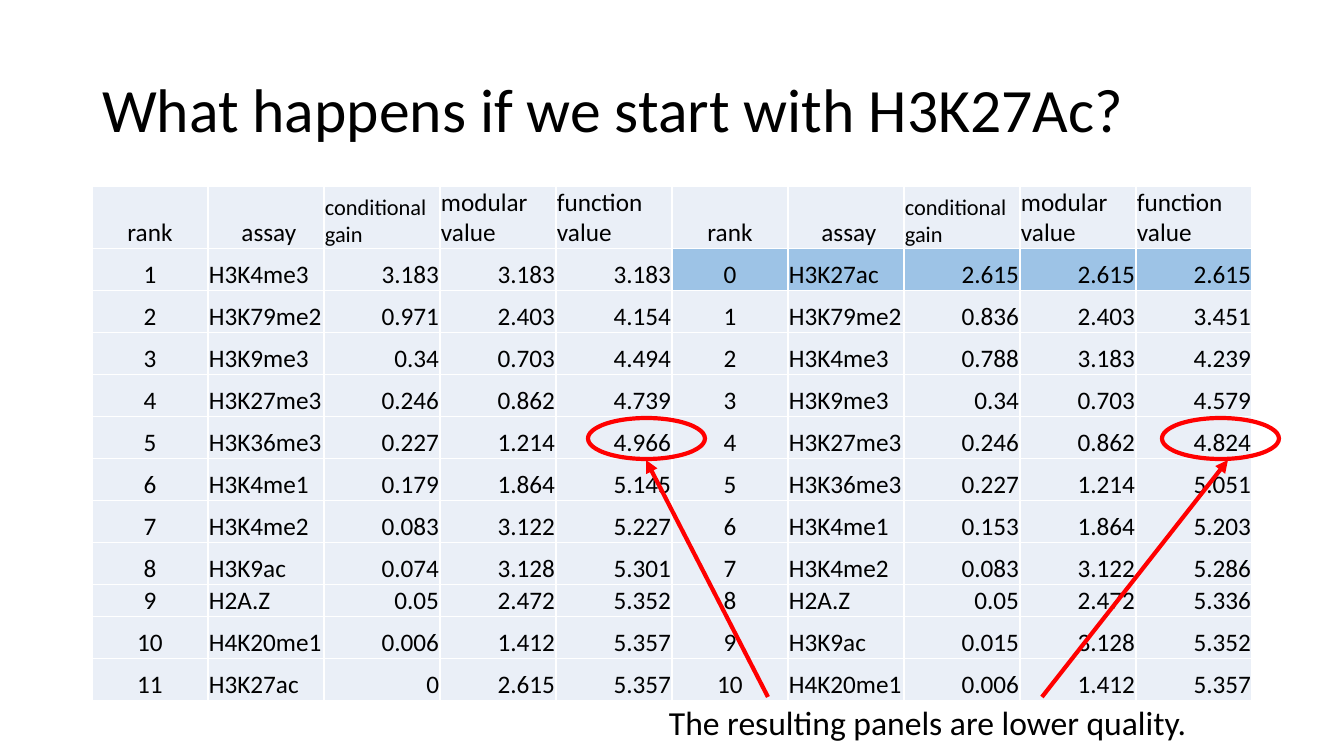
"""Build the slide comparing two assay rankings, the second starting from H3K27ac."""
from lxml import etree
from pptx import Presentation
from pptx import util as u
from pptx.dml.color import RGBColor
from pptx.enum import shapes, text
from pptx.oxml import ns

TITLE = "What happens if we start with H3K27Ac?"
CAPTION = "The resulting panels are lower quality."
HEADINGS = ["rank", " assay", "conditional gain", "modular value", "function value"]
FREE_START = [
    ("1", "H3K4me3", "3.183", "3.183", "3.183"),
    ("2", "H3K79me2", "0.971", "2.403", "4.154"),
    ("3", "H3K9me3", "0.34", "0.703", "4.494"),
    ("4", "H3K27me3", "0.246", "0.862", "4.739"),
    ("5", "H3K36me3", "0.227", "1.214", "4.966"),
    ("6", "H3K4me1", "0.179", "1.864", "5.145"),
    ("7", "H3K4me2", "0.083", "3.122", "5.227"),
    ("8", "H3K9ac", "0.074", "3.128", "5.301"),
    ("9", "H2A.Z", "0.05", "2.472", "5.352"),
    ("10", "H4K20me1", "0.006", "1.412", "5.357"),
    ("11", "H3K27ac", "0", "2.615", "5.357"),
]
FIXED_START = [
    ("0", "H3K27ac", "2.615", "2.615", "2.615"),
    ("1", "H3K79me2", "0.836", "2.403", "3.451"),
    ("2", "H3K4me3", "0.788", "3.183", "4.239"),
    ("3", "H3K9me3", "0.34", "0.703", "4.579"),
    ("4", "H3K27me3", "0.246", "0.862", "4.824"),
    ("5", "H3K36me3", "0.227", "1.214", "5.051"),
    ("6", "H3K4me1", "0.153", "1.864", "5.203"),
    ("7", "H3K4me2", "0.083", "3.122", "5.286"),
    ("8", "H2A.Z", "0.05", "2.472", "5.336"),
    ("9", "H3K9ac", "0.015", "3.128", "5.352"),
    ("10", "H4K20me1", "0.006", "1.412", "5.357"),
]
COLORS = {"text": "000000", "cell": "EAEFF7", "start": "9DC3E6",
          "border": "FFFFFF", "mark": "FF0000"}
FONT = "Calibri"
LEFT, TABLE_TOP, COLUMN = 92, 186, 116
HEADER_HEIGHT, ROW_HEIGHT, SHORT_ROW, SHORT_HEIGHT = 62, 42, 9, 31
OVAL_TOP, OVAL_WIDTH, OVAL_HEIGHT = 418, 117, 41
CAPTION_TOP, ARROW_TIP = 697, 460
CALLOUTS = [(588, 768, 646), (1162, 1042, 1228)]
LEFT_ALIGN, CENTER, RIGHT = (text.PP_ALIGN.LEFT, text.PP_ALIGN.CENTER,
                             text.PP_ALIGN.RIGHT)
HEADING_ALIGN = [CENTER, CENTER, LEFT_ALIGN, LEFT_ALIGN, LEFT_ALIGN]
VALUE_ALIGN = [CENTER, LEFT_ALIGN, RIGHT, RIGHT, RIGHT]


def px(length):
    return u.Emu(round(length * 914400 / 100.8))


def color(name):
    return RGBColor.from_string(COLORS[name])


def write(frame, words, size, align=LEFT_ALIGN):
    para = frame.paragraphs[0]
    para.alignment = align
    span = para.add_run()
    span.text = words
    span.font.name, span.font.size, span.font.bold = FONT, u.Pt(size), False
    span.font.color.rgb = color("text")
    return para


def add_borders(cell):
    properties = cell._tc.get_or_add_tcPr()
    for side in ("lnL", "lnR", "lnT", "lnB"):
        line = etree.SubElement(properties, ns.qn("a:" + side), w=str(u.Pt(1)))
        fill = etree.SubElement(line, ns.qn("a:solidFill"))
        etree.SubElement(fill, ns.qn("a:srgbClr"), val=COLORS["border"])


def add_rankings(page):
    rows = [HEADINGS * 2]
    rows += [free + fixed for free, fixed in zip(FREE_START, FIXED_START)]
    heights = [HEADER_HEIGHT] + [ROW_HEIGHT] * (len(rows) - 1)
    heights[SHORT_ROW] = SHORT_HEIGHT
    count = len(rows[0])
    table = page.shapes.add_table(len(rows), count, px(LEFT), px(TABLE_TOP),
                                  px(COLUMN * count), px(sum(heights))).table
    table.first_row = table.horz_banding = False
    for column in table.columns:
        column.width = px(COLUMN)
    for r, values in enumerate(rows):
        table.rows[r].height = px(heights[r])
        aligns = VALUE_ALIGN if r else HEADING_ALIGN
        for c, value in enumerate(values):
            cell = table.cell(r, c)
            cell.margin_left = cell.margin_right = cell.margin_top = px(1)
            cell.margin_bottom = 0
            cell.vertical_anchor = text.MSO_ANCHOR.BOTTOM
            add_borders(cell)
            cell.fill.solid()
            is_start = r == 1 and c >= len(HEADINGS)
            cell.fill.fore_color.rgb = color("start" if is_start else "cell")
            size = 16 if value == "conditional gain" else 18
            write(cell.text_frame, value, size, aligns[c % len(HEADINGS)])


def mark(line):
    line.color.rgb = color("mark")
    line.width = u.Pt(3)


def add_callouts(page):
    group = page.shapes.add_group_shape().shapes
    box = group.add_textbox(px(659), px(CAPTION_TOP), px(543), px(50))
    box.text_frame.word_wrap = False
    box.text_frame.auto_size = text.MSO_AUTO_SIZE.SHAPE_TO_FIT_TEXT
    write(box.text_frame, CAPTION, 24)
    for oval_left, _, _ in CALLOUTS:
        oval = group.add_shape(shapes.MSO_SHAPE.OVAL, px(oval_left), px(OVAL_TOP),
                               px(OVAL_WIDTH), px(OVAL_HEIGHT))
        oval.shadow.inherit = False
        oval.fill.background()
        mark(oval.line)
    for _, start, tip in CALLOUTS:
        arrow = group.add_connector(shapes.MSO_CONNECTOR.STRAIGHT, px(start),
                                    px(CAPTION_TOP), px(tip), px(ARROW_TIP))
        mark(arrow.line)
        outline = arrow.line._get_or_add_ln()
        etree.SubElement(outline, ns.qn("a:tailEnd"), type="triangle")
        etree.SubElement(arrow._element.spPr, ns.qn("a:effectLst"))


def main():
    deck = Presentation()
    deck.slide_width, deck.slide_height = px(1344), px(756)
    page = deck.slides.add_slide(deck.slide_layouts[5])
    for name in ("left", "top", "width", "height"):
        place = {"left": LEFT, "top": 40, "width": 1159, "height": 146}
        setattr(page.shapes.title, name, px(place[name]))
    frame = page.shapes.title.text_frame
    frame.vertical_anchor = text.MSO_ANCHOR.MIDDLE
    write(frame, TITLE, 44).line_spacing = 0.9
    add_rankings(page)
    add_callouts(page)
    deck.save("out.pptx")


if __name__ == "__main__":
    main()
